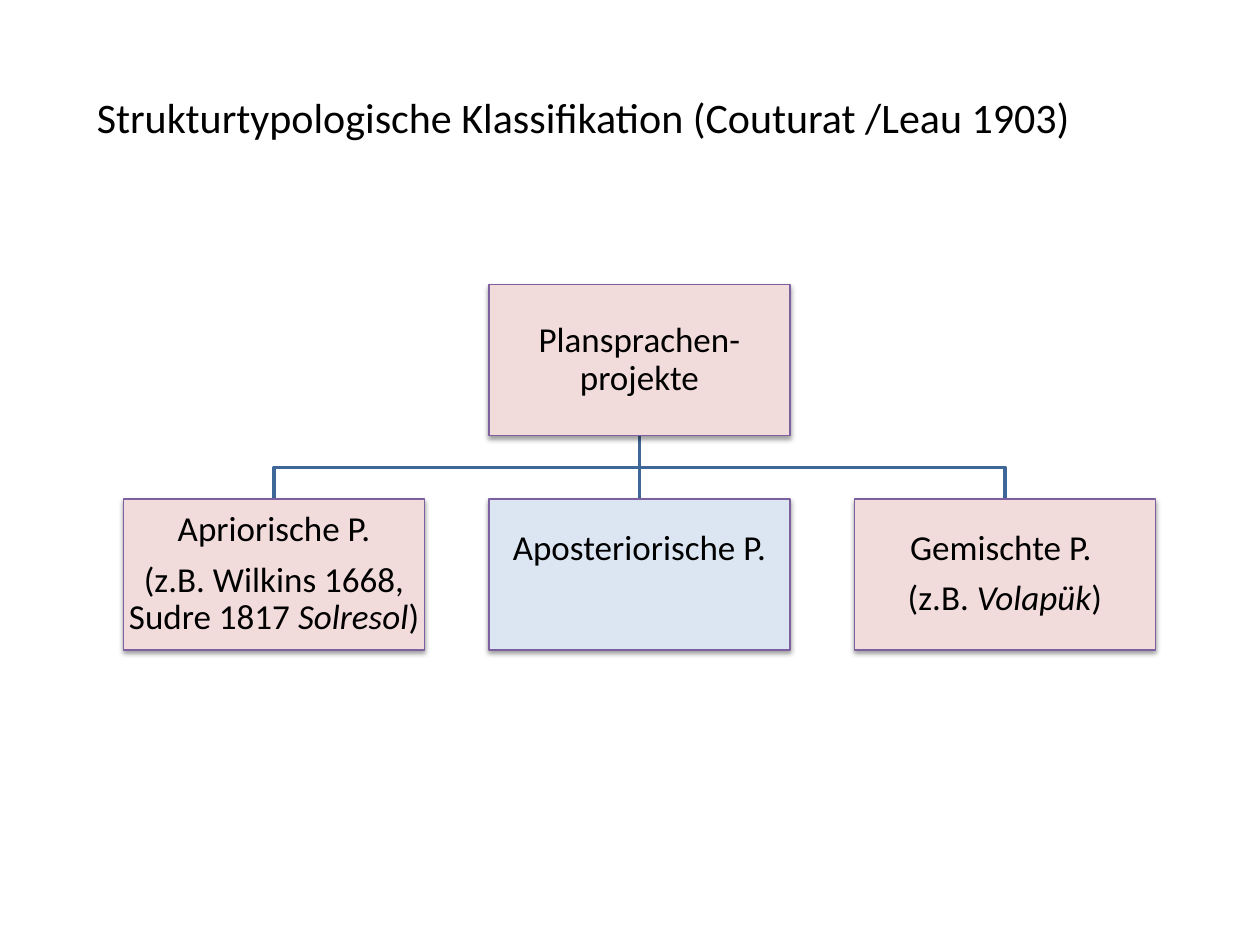
from lxml import etree
from pptx import Presentation
from pptx.dml.color import RGBColor
from pptx.enum import shapes, text
from pptx.oxml import ns
from pptx.util import Inches, Pt

BLACK = RGBColor(0x00, 0x00, 0x00)
ROSE = RGBColor(0xF2, 0xDC, 0xDB)
PALE_BLUE = RGBColor(0xDC, 0xE6, 0xF2)
PURPLE = RGBColor(0x7D, 0x60, 0xA0)
BRANCH_BLUE = RGBColor(0x3F, 0x67, 0x97)

BOX_W, BOX_H = Inches(2.39), Inches(1.2)
COLUMN_STEP, LEVEL_GAP = Inches(2.9), Inches(0.5)

ROOT = [[("Plansprachen- projekte", False)]]
CLASSES = [
    ([[("Apriorische P.", False)],
      [("(z.B. Wilkins 1668, Sudre 1817 ", False), ("Solresol", True), (")", False)]],
     ROSE, Inches(0.01)),
    ([[("Aposteriorische P.", False)]], PALE_BLUE, Inches(0.41)),
    ([[("Gemischte P. ", False)],
      [("(z.B. ", False), ("Volapük", True), (")", False)]],
     ROSE, Inches(0.01)),
]


def add_run(paragraph, wording, size, italic=False):
    """Append a black Calibri run to the paragraph."""
    run = paragraph.add_run()
    run.text = wording
    run.font.name, run.font.size, run.font.italic = "Calibri", Pt(size), italic
    run.font.color.rgb = BLACK


def add_shadow(shape):
    """Give the shape a soft black shadow straight below it."""
    shape.shadow.inherit = False
    effects = shape.element.spPr.find(ns.qn("a:effectLst"))
    outer = etree.SubElement(effects, ns.qn("a:outerShdw"), blurRad=str(Pt(3.1)),
                             dist=str(Pt(1.6)), dir="5400000", rotWithShape="0")
    color = etree.SubElement(outer, ns.qn("a:srgbClr"), val="000000")
    etree.SubElement(color, ns.qn("a:alpha"), val="38000")


def add_title(slide, left, top, width, height):
    """Place the heading in the given box."""
    frame = slide.shapes.add_textbox(left, top, width, height).text_frame
    frame.word_wrap = True
    add_run(frame.paragraphs[0],
            "Strukturtypologische Klassifikation (Couturat /Leau 1903)", 24)


def add_node(slide, left, top, lines, fill, bottom_inset=Inches(0.01)):
    """Place one labelled box of the tree."""
    node = slide.shapes.add_shape(shapes.MSO_SHAPE.RECTANGLE, left, top, BOX_W, BOX_H)
    node.fill.solid()
    node.fill.fore_color.rgb = fill
    node.line.color.rgb = PURPLE
    node.line.width = Pt(0.75)
    add_shadow(node)
    frame = node.text_frame
    frame.word_wrap = True
    frame.vertical_anchor = text.MSO_ANCHOR.MIDDLE
    frame.margin_left = frame.margin_right = frame.margin_top = Inches(0.01)
    frame.margin_bottom = bottom_inset
    for index, line in enumerate(lines):
        paragraph = frame.add_paragraph() if index else frame.paragraphs[0]
        paragraph.alignment = text.PP_ALIGN.CENTER
        paragraph.line_spacing = 0.9
        paragraph.space_after = Pt(7)
        for wording, italic in line:
            add_run(paragraph, wording, 20, italic)


def add_branch(slide, start_x, end_x, top):
    """Draw the line from the root down to one class."""
    bottom = top + LEVEL_GAP
    if start_x == end_x:
        branch = slide.shapes.add_connector(
            shapes.MSO_CONNECTOR.STRAIGHT, start_x, top, end_x, bottom)
        etree.SubElement(branch.element.spPr, ns.qn("a:effectLst"))
    else:
        middle = top + LEVEL_GAP // 2
        builder = slide.shapes.build_freeform(start_x, top)
        builder.add_line_segments(
            [(start_x, middle), (end_x, middle), (end_x, bottom)], close=False)
        branch = builder.convert_to_shape()
        branch.fill.background()
        branch.shadow.inherit = False
    branch.line.color.rgb = BRANCH_BLUE
    branch.line.width = Pt(2)


def add_tree(slide, left, top):
    """Place the root, its classes and the branches between them."""
    lefts = [left + column * COLUMN_STEP for column in range(len(CLASSES))]
    root_left = lefts[len(lefts) // 2]
    for class_left in reversed(lefts):
        add_branch(slide, root_left + BOX_W // 2, class_left + BOX_W // 2, top + BOX_H)
    add_node(slide, root_left, top, ROOT, ROSE)
    for class_left, (lines, fill, inset) in zip(lefts, CLASSES):
        add_node(slide, class_left, top + BOX_H + LEVEL_GAP, lines, fill, inset)


def main():
    """Build and save the slide."""
    deck = Presentation()
    deck.slide_width, deck.slide_height = Inches(10), Inches(7.5)
    slide = deck.slides.add_slide(deck.slide_layouts[6])
    add_tree(slide, Inches(0.98), Inches(2.26))
    add_title(slide, Inches(0.67), Inches(0.68), Inches(8.9), Inches(0.5))
    deck.save("out.pptx")


if __name__ == "__main__":
    main()
